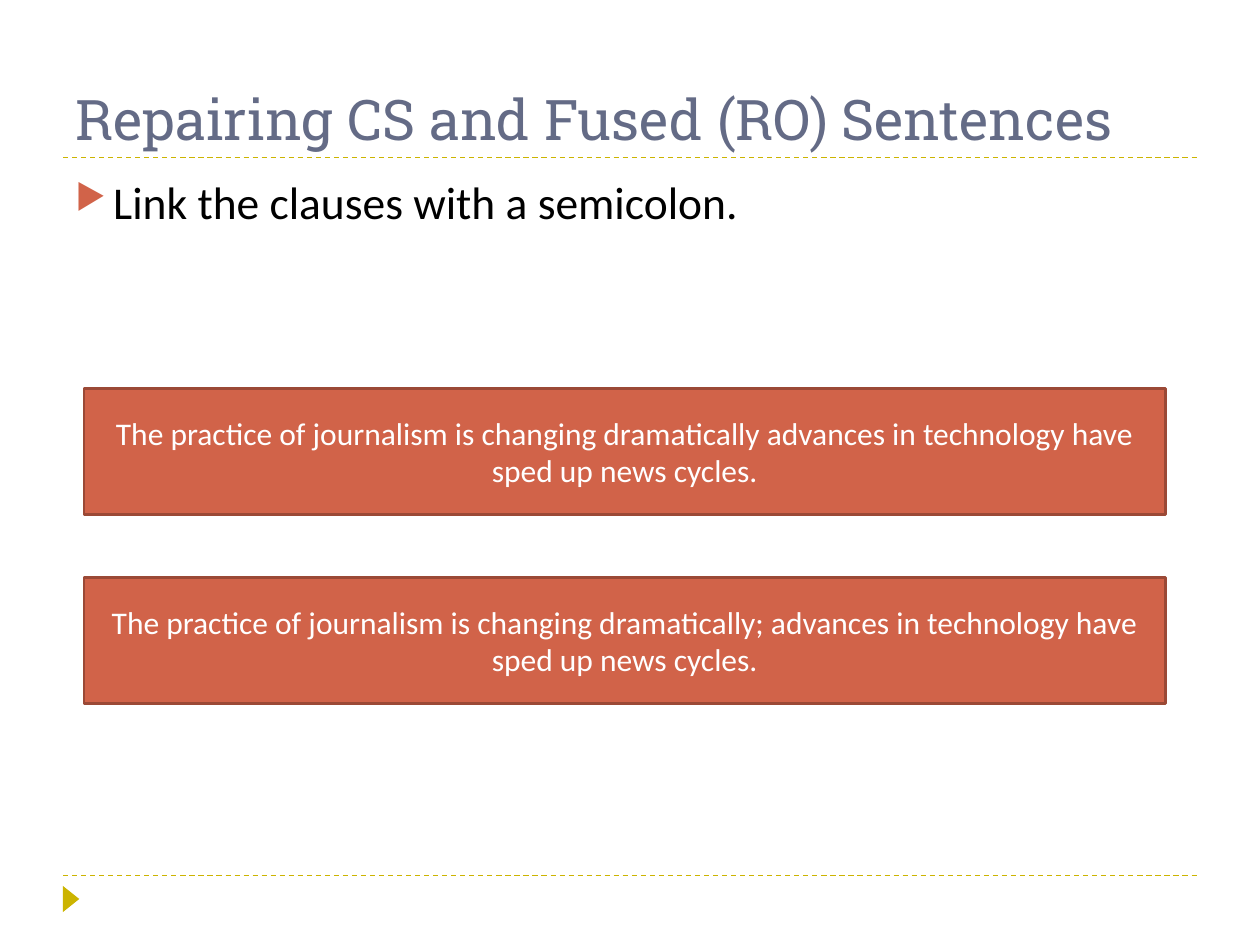
from lxml import etree
from pptx import Presentation
from pptx.dml.color import RGBColor
from pptx.enum import dml, shapes, text
from pptx.oxml import ns
from pptx.util import Pt

GOLD, RUST, DARK_RUST = "CCB400", "D16349", "9B4936"
SLATE, BLACK, WHITE = "646B86", "000000", "FFFFFF"


def color(value):
    return RGBColor.from_string(value)


def add_element(parent, tag, **attributes):
    return etree.SubElement(parent, ns.qn(tag), attributes)


class SlideBuilder:
    heading_font = "Roboto Slab"
    body_font = "Calibri"

    def __init__(self, slide):
        self.slide = slide

    def set_text(self, shape, wording, size, font, font_color, anchor, align):
        frame = shape.text_frame
        frame.text = wording
        frame.word_wrap = True
        frame.vertical_anchor = anchor
        paragraph = frame.paragraphs[0]
        paragraph.alignment = align
        run_font = paragraph.runs[0].font
        run_font.size = Pt(size)
        run_font.name = font
        run_font.color.rgb = color(font_color)
        return paragraph

    def rule(self, left, right, top):
        line = self.slide.shapes.add_connector(
            shapes.MSO_CONNECTOR.STRAIGHT, Pt(left), Pt(top), Pt(right), Pt(top))
        line.line.color.rgb = color(GOLD)
        line.line.width = Pt(0.75)
        line.line.dash_style = dml.MSO_LINE.DASH
        add_element(line._element.spPr, "a:effectLst")

    def shape(self, kind, left, top, width, height, fill):
        shape = self.slide.shapes.add_shape(
            kind, Pt(left), Pt(top), Pt(width), Pt(height))
        shape.shadow.inherit = False
        shape.fill.solid()
        shape.fill.fore_color.rgb = color(fill)
        shape.line.fill.background()
        return shape

    def marker(self, left, top, width, height):
        triangle = self.shape(
            shapes.MSO_SHAPE.ISOSCELES_TRIANGLE, left, top, width, height, GOLD)
        triangle.rotation = 90

    def example(self, wording, left, top, width, height):
        box = self.shape(
            shapes.MSO_SHAPE.RECTANGLE, left, top, width, height, RUST)
        box.line.color.rgb = color(DARK_RUST)
        box.line.width = Pt(1.5)
        self.set_text(box, wording, 18, self.body_font, WHITE,
                      text.MSO_ANCHOR.MIDDLE, text.PP_ALIGN.CENTER)

    def text_box(self, wording, left, top, width, height, size, font,
                 font_color, anchor):
        box = self.slide.shapes.add_textbox(
            Pt(left), Pt(top), Pt(width), Pt(height))
        return self.set_text(box, wording, size, font, font_color, anchor,
                             text.PP_ALIGN.LEFT)

    def title(self, wording, left, top, width, height):
        self.text_box(wording, left, top, width, height, 32,
                      self.heading_font, SLATE, text.MSO_ANCHOR.BOTTOM)

    def bullet(self, wording, left, top, width, height):
        paragraph = self.text_box(wording, left, top, width, height, 26,
                                  self.body_font, BLACK, text.MSO_ANCHOR.TOP)
        paragraph.space_before = Pt(6)
        properties = paragraph._p.get_or_add_pPr()
        indent = Pt(21.6)
        properties.set("marL", str(indent))
        properties.set("indent", str(-indent))
        bullet_color = add_element(properties, "a:buClr")
        add_element(bullet_color, "a:srgbClr", val=RUST)
        add_element(properties, "a:buSzPct", val="76000")
        add_element(properties, "a:buChar", char="▶")


def main():
    presentation = Presentation()
    presentation.slide_width, presentation.slide_height = Pt(720), Pt(540)
    builder = SlideBuilder(
        presentation.slides.add_slide(presentation.slide_layouts[6]))
    margin, content_width = 36, 648

    # Footer and title rules, footer marker
    for top in (500.4, 90):
        builder.rule(margin, margin + content_width, top)
    builder.marker(33.1, 509, 15, 9.4)

    # Title and rule for repairing
    builder.title("Repairing CS and Fused (RO) Sentences",
                  margin, 12.2, content_width, 77.8)
    builder.bullet("Link the clauses with a semicolon.",
                   margin, 96, content_width, 388.8)

    # Sentence before and after the repair
    for index, mark in enumerate(("", ";")):
        builder.example(
            f"The practice of journalism is changing dramatically{mark} "
            "advances in technology have sped up news cycles.",
            48, 222 + 108 * index, 618, 72)

    presentation.save("out.pptx")


if __name__ == "__main__":
    main()
